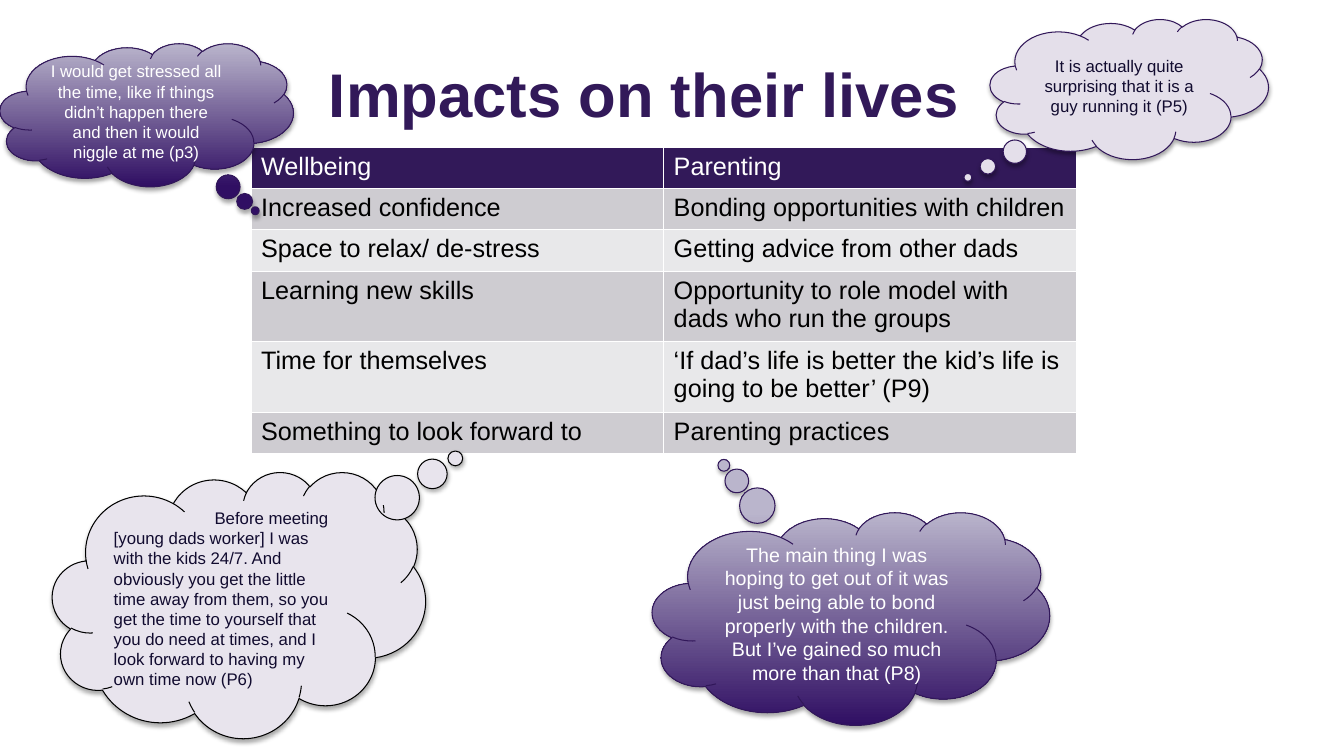
from pptx import Presentation, util as u
from pptx.dml import color
from pptx.enum import shapes, text
from pptx.oxml import parse_xml
from pptx.oxml.ns import nsdecls

INK = {"plum": "321959", "edge": "311759", "deep": "300F63", "haze": "BAB5CC",
       "lilac": "E4DFEA", "pale": "E8E4ED", "navy": "110B2F", "black": "000000",
       "white": "FFFFFF", "dark": "CECCD1", "light": "E8E8EA"}

ROWS = [
    ("Wellbeing", "Parenting"),
    ("Increased confidence", "Bonding opportunities with children"),
    ("Space to relax/ de-stress", "Getting advice from other dads"),
    ("Learning new skills", "Opportunity to role model with dads who run the groups"),
    ("Time for themselves",
     "‘If dad’s life is better the kid’s life is going to be better’ (P9)"),
    ("Something to look forward to", "Parenting practices"),
]


def rgb(name):
    return color.RGBColor.from_string(INK[name])


class Board:
    """Draws styled elements on one slide, with lengths in percent of its size."""

    font = "Arial"
    mid = text.PP_ALIGN.CENTER

    def __init__(self, deck):
        self.wide, self.high = deck.slide_width, deck.slide_height
        self.slide = deck.slides.add_slide(deck.slide_layouts[6])

    def across(self, share):
        return u.Emu(round(self.wide * share / 100))

    def down(self, share):
        return u.Emu(round(self.high * share / 100))

    def place(self, box):
        left, top, width, height = box
        return self.across(left), self.down(top), self.across(width), self.down(height)

    def label(self, frame, words, size, ink, align=None, bold=False):
        frame.word_wrap = True
        para = frame.paragraphs[0]
        para.alignment = align
        run = para.add_run()
        run.text = words
        run.font.name, run.font.size, run.font.bold = self.font, u.Pt(size), bold
        run.font.color.rgb = rgb(ink)
        return para

    def title(self, box, words):
        frame = self.slide.shapes.add_textbox(*self.place(box)).text_frame
        frame.vertical_anchor = text.MSO_ANCHOR.MIDDLE
        self.label(frame, words, 44, "plum", self.mid, True)

    def table(self, left, top, col, row, rows):
        count = len(rows)
        box = left, top, col * len(rows[0]), row * count
        grid = self.slide.shapes.add_table(count, len(rows[0]), *self.place(box)).table
        for i, line in enumerate(rows):
            for j, words in enumerate(line):
                cell = grid.cell(i, j)
                cell.fill.solid()
                fill = ("dark" if i % 2 else "light") if i else "plum"
                cell.fill.fore_color.rgb = rgb(fill)
                self.label(cell.text_frame, words, 18, "black" if i else "white")

    def shade(self, shape):
        shape._element.spPr.append(parse_xml(
            f'<a:effectLst {nsdecls("a")}><a:outerShdw blurRad="{u.Pt(3.1)}" '
            f'dist="{u.Pt(1.8)}" dir="5400000" rotWithShape="0">'
            f'<a:srgbClr val="{INK["black"]}"><a:alpha val="35000"/></a:srgbClr>'
            '</a:outerShdw></a:effectLst>'))

    def cloud(self, box, tail, words, fill=None, edge="edge", size=12, align=mid):
        shape = self.slide.shapes.add_shape(
            shapes.MSO_SHAPE.CLOUD_CALLOUT, *self.place(box))
        shape.adjustments[0], shape.adjustments[1] = tail
        if fill:
            shape.fill.solid()
            shape.fill.fore_color.rgb = rgb(fill)
        else:
            shape.fill.gradient()
            shape.fill.gradient_angle = 90
            for stop, ink, spot in zip(shape.fill.gradient_stops, ("deep", "haze"), (0, 1)):
                stop.color.rgb, stop.position = rgb(ink), spot
        shape.line.color.rgb = rgb(edge)
        shape.line.width = u.Pt(0.75)
        self.shade(shape)
        frame = shape.text_frame
        frame.vertical_anchor = text.MSO_ANCHOR.MIDDLE
        return self.label(frame, words, size, "navy" if fill else "white", align)


def main():
    deck = Presentation()
    deck.slide_width, deck.slide_height = u.Inches(13.33), u.Inches(7.5)
    board = Board(deck)
    board.title((2.78, 4, 91.6, 16.67), "Impacts on their lives ")
    board.table(18.68, 19.47, 30.7, 5.47, ROWS)
    para = board.cloud(
        (3.9, 62.4, 27.76, 35.2), (0.58, -0.55),
        "Before meeting [young dads worker] I was with the kids 24/7. And obviously "
        "you get the little time away from them, so you get the time to yourself that "
        "you do need at times, and I look forward to having my own time now (P6)",
        "pale", "black", align=text.PP_ALIGN.LEFT)
    para._p.get_or_add_pPr().set("indent", str(u.Inches(1)))
    board.cloud(
        (73.67, 2.53, 20.71, 18.53), (-0.58, 0.63),
        "It is actually quite surprising that it is a guy running it (P5)", "lilac")
    board.cloud(
        (0, 5.73, 21.83, 18.93), (0.37, 0.67),
        "I would get stressed all the time, like if things didn’t happen there "
        "and then it would niggle at me (p3)")
    board.cloud(
        (48.54, 67.73, 29.56, 28.13), (-0.32, -0.72),
        "The main thing I was hoping to get out of it was just being able to bond "
        "properly with the children. But I’ve gained so much more than that (P8)",
        size=14)
    deck.save("out.pptx")


if __name__ == "__main__":
    main()
